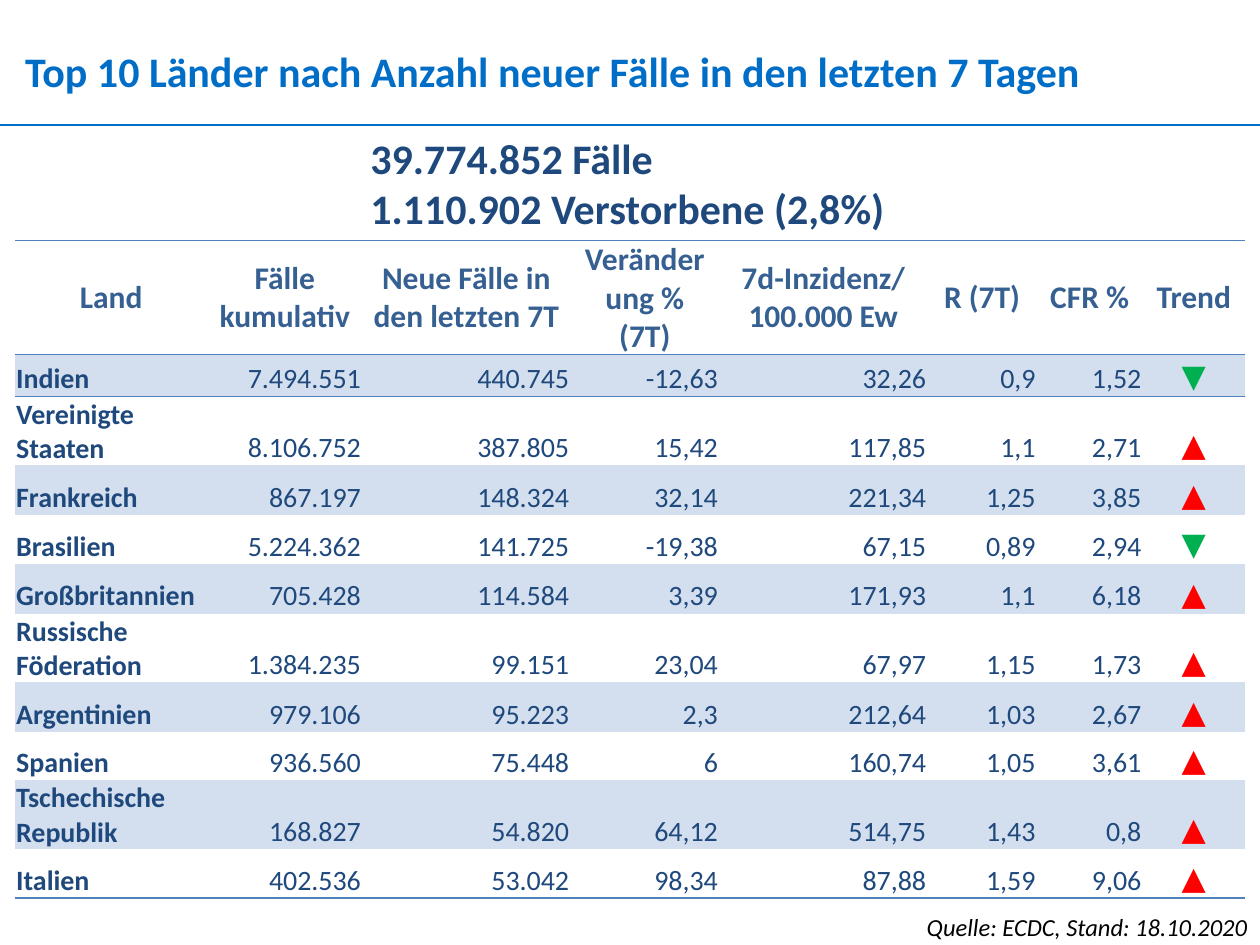
import pptx
import pptx.dml.color
import pptx.enum.shapes
import pptx.enum.text
import pptx.oxml
import pptx.oxml.ns
import pptx.util

Pt = pptx.util.Pt
ALIGN = pptx.enum.text.PP_ALIGN
ANCHOR = pptx.enum.text.MSO_ANCHOR
AUTO_SIZE = pptx.enum.text.MSO_AUTO_SIZE

COLORS = {
    "title": "006EC7",
    "text": "1F497D",
    "header": "366092",
    "border": "4F81BD",
    "band": "D3DFEE",
    "rising": "FF0000",
    "falling": "00B050",
    "source": "000000",
}
NO_STYLE_NO_GRID = "{2D5ABB26-0587-4C30-8999-92F81FD0307C}"

HEADERS = ["Land", "Fälle kumulativ", "Neue Fälle in den letzten 7T", "Veränderung % (7T)",
           "7d-Inzidenz/ 100.000 Ew", "R (7T)", "CFR %", "Trend"]
COUNTRIES = [
    ["Indien", "7.494.551", "440.745", "-12,63", "32,26", "0,9", "1,52"],
    ["Vereinigte Staaten", "8.106.752", "387.805", "15,42", "117,85", "1,1", "2,71"],
    ["Frankreich", "867.197", "148.324", "32,14", "221,34", "1,25", "3,85"],
    ["Brasilien", "5.224.362", "141.725", "-19,38", "67,15", "0,89", "2,94"],
    ["Großbritannien", "705.428", "114.584", "3,39", "171,93", "1,1", "6,18"],
    ["Russische Föderation", "1.384.235", "99.151", "23,04", "67,97", "1,15", "1,73"],
    ["Argentinien", "979.106", "95.223", "2,3", "212,64", "1,03", "2,67"],
    ["Spanien", "936.560", "75.448", "6", "160,74", "1,05", "3,61"],
    ["Tschechische Republik", "168.827", "54.820", "64,12", "514,75", "1,43", "0,8"],
    ["Italien", "402.536", "53.042", "98,34", "87,88", "1,59", "9,06"],
]
COLUMN_WIDTHS = [110, 88.5, 119, 85, 119, 62.5, 60.5, 58.5]
ROW_HEIGHTS = [65, 24, 39, 28.5, 28, 28.5, 39, 28.5, 27.5, 39.5, 28]


def format_paragraph(paragraph, size, color, bold=False, italic=False, alignment=ALIGN.LEFT):
    paragraph.alignment = alignment
    font = paragraph.font
    font.name = "Calibri"
    font.size = Pt(size)
    font.bold = bold
    font.italic = italic
    font.color.rgb = pptx.dml.color.RGBColor.from_string(COLORS[color])


def add_border(cell, side):
    """Draw a 1 pt line on one side of a cell: T or B. Call before setting the fill."""
    cell._tc.get_or_add_tcPr().append(pptx.oxml.parse_xml(
        f'<a:ln{side} {pptx.oxml.ns.nsdecls("a")} w="{Pt(1)}"><a:solidFill>'
        f'<a:srgbClr val="{COLORS["border"]}"/></a:solidFill></a:ln{side}>'))


presentation = pptx.Presentation()
presentation.slide_width = Pt(720)
presentation.slide_height = Pt(540)
slide = presentation.slides.add_slide(presentation.slide_layouts[5])

# Title and rule
title = slide.shapes.title
title.left, title.top, title.width, title.height = Pt(14.4), Pt(26), Pt(693), Pt(29)
frame = title.text_frame
frame.text = "Top 10 Länder nach Anzahl neuer Fälle in den letzten 7 Tagen"
frame.margin_left = frame.margin_right = frame.margin_top = frame.margin_bottom = 0
frame.vertical_anchor = ANCHOR.TOP
frame.word_wrap = True
frame.auto_size = AUTO_SIZE.SHAPE_TO_FIT_TEXT
format_paragraph(frame.paragraphs[0], 24, "title", bold=True)

rule = slide.shapes.add_connector(
    pptx.enum.shapes.MSO_CONNECTOR.STRAIGHT, Pt(0), Pt(71.5), Pt(720), Pt(71.5))
rule.line.color.rgb = pptx.dml.color.RGBColor.from_string(COLORS["title"])
rule.line.width = Pt(1.5)
rule._element.spPr.append(
    pptx.oxml.parse_xml(f'<a:effectLst {pptx.oxml.ns.nsdecls("a")}/>'))

# Worldwide totals
totals = slide.shapes.add_textbox(Pt(204.5), Pt(72), Pt(311), Pt(65.5))
totals.text_frame.text = "39.774.852 Fälle\n1.110.902 Verstorbene (2,8%)"
totals.text_frame.word_wrap = False
totals.text_frame.auto_size = AUTO_SIZE.SHAPE_TO_FIT_TEXT
for paragraph in totals.text_frame.paragraphs:
    format_paragraph(paragraph, 24, "text", bold=True)

# Source note
source = slide.shapes.add_textbox(Pt(465), Pt(517.5), Pt(255), Pt(24.5))
source.text_frame.text = "Quelle: ECDC, Stand: 18.10.2020"
source.text_frame.word_wrap = True
source.text_frame.auto_size = AUTO_SIZE.SHAPE_TO_FIT_TEXT
format_paragraph(source.text_frame.paragraphs[0], 14, "source", italic=True,
                 alignment=ALIGN.RIGHT)

# Country table
table_shape = slide.shapes.add_table(
    len(ROW_HEIGHTS), len(COLUMN_WIDTHS), Pt(8.5), Pt(137.5),
    Pt(sum(COLUMN_WIDTHS)), Pt(sum(ROW_HEIGHTS)))
table = table_shape.table
table.first_row = False
table.horz_banding = False
table._tbl.tblPr.find(pptx.oxml.ns.qn("a:tableStyleId")).text = NO_STYLE_NO_GRID
for column, width in zip(table.columns, COLUMN_WIDTHS):
    column.width = Pt(width)
for row, height in zip(table.rows, ROW_HEIGHTS):
    row.height = Pt(height)

trends = ["falling" if country[3].startswith("-") else "rising" for country in COUNTRIES]
arrows = {"falling": "▼", "rising": "▲"}
rows = [HEADERS] + [country + [arrows[trend]] for country, trend in zip(COUNTRIES, trends)]
last_row = len(rows) - 1
trend_column = len(HEADERS) - 1

for row_index, values in enumerate(rows):
    for column_index, value in enumerate(values):
        cell = table.cell(row_index, column_index)
        cell.text = value
        paragraph = cell.text_frame.paragraphs[0]
        is_header = row_index == 0
        cell.margin_left = cell.margin_right = Pt(4.5 if is_header else 0.75)
        cell.margin_top = Pt(0 if is_header else 0.75)
        cell.margin_bottom = 0
        cell.vertical_anchor = ANCHOR.MIDDLE if is_header else ANCHOR.BOTTOM

        if is_header:
            format_paragraph(paragraph, 18, "header", bold=True, alignment=ALIGN.CENTER)
        elif column_index == 0:
            format_paragraph(paragraph, 16, "text", bold=True)
        elif column_index == trend_column:
            format_paragraph(paragraph, 18, trends[row_index - 1], alignment=ALIGN.CENTER)
        else:
            format_paragraph(paragraph, 16, "text", alignment=ALIGN.RIGHT)

        if row_index in (0, 1):
            add_border(cell, "T")
        if row_index in (0, last_row):
            add_border(cell, "B")
        if row_index % 2:
            cell.fill.solid()
            cell.fill.fore_color.rgb = pptx.dml.color.RGBColor.from_string(COLORS["band"])
        else:
            cell.fill.background()

presentation.save("out.pptx")
